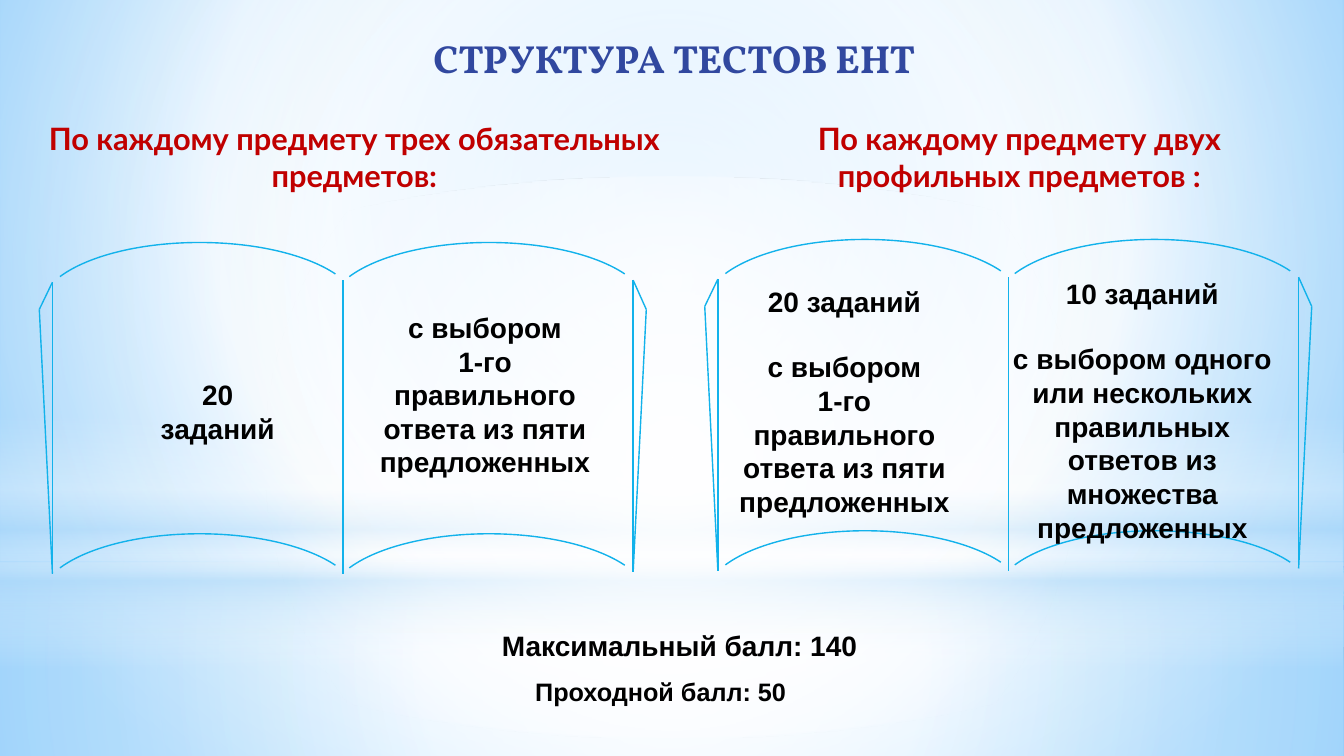
"""Builds the slide on the structure of the ENT tests."""
import pptx
import pptx.dml.color
import pptx.enum.shapes
import pptx.enum.text
import pptx.oxml
import pptx.oxml.ns
import pptx.util

Inches = pptx.util.Inches
RGBColor = pptx.dml.color.RGBColor
Shape = pptx.enum.shapes.MSO_SHAPE
Align = pptx.enum.text.PP_ALIGN
qn = pptx.oxml.ns.qn

BLACK = RGBColor(0, 0, 0)
NAVY = RGBColor(0x31, 0x48, 0x9F)
RED = RGBColor(0xC0, 0, 0)
CYAN = RGBColor(0x12, 0xB2, 0xEB)
PALE = RGBColor(0xB4, 0xDC, 0xFA)
WHITE = RGBColor(0xFF, 0xFF, 0xFF)
SKY = RGBColor(0x9E, 0xD5, 0xFF)
BLUE = RGBColor(0x5B, 0xB9, 0xFF)

MIDDLE = (50, 50, 50, 50)
BACK = [(0, SKY, 100), (60, WHITE, 100), (100, BLUE, 100)]
GLOWS = [
    (Shape.RECTANGLE, 5.58, 1.92, MIDDLE, [(0, WHITE, 91), (37, WHITE, 76), (100, PALE, 79)]),
    (Shape.RECTANGLE, 0, 5.58, MIDDLE, [(0, WHITE, 89), (48, WHITE, 62), (100, PALE, 79)]),
    (Shape.RECTANGLE, 4.12, 2.5, None,
     [(0, WHITE, 0), (29, WHITE, 30), (45, PALE, 40), (55, WHITE, 26), (65, PALE, 60), (100, WHITE, 0)]),
    (Shape.OVAL, 1.75, 5.58, MIDDLE, [(0, WHITE, 100), (56, WHITE, 0)]),
]

BOOKS = [(0, 0), (6.6, -0.03)]
ARCS = [(x, y) for y in (1.48, 4.37) for x in (1.32, 4.19)]
EDGES = [
    (0.52, 2.8, 0.52, 5.69), (3.4, 2.78, 3.4, 5.69), (6.28, 2.78, 6.28, 5.67),
    (0.39, 3.07, 0.52, 5.69), (6.41, 3.07, 6.28, 5.67), (0.39, 3.07, 0.52, 2.8),
    (6.28, 3.07, 6.28, 2.78), (6.41, 3.07, 6.28, 2.78),
]

TITLE = ("Vollkorn", 28, NAVY, Align.LEFT)
HEAD = ("Lato", 22, RED, Align.CENTER)
BODY = ("Arial", 20, BLACK, Align.CENTER)
SCORE = ("Arial", 20, BLACK, Align.LEFT)
PASS = ("Arial", 18, BLACK, Align.LEFT)
ONE = ["с выбором", "1-го правильного ответа из пяти предложенных"]
MANY = "с выбором одного или нескольких правильных ответов из множества предложенных"

TEXTS = [
    ((4.2, 0.29, 5.46, 0.57), TITLE, ["СТРУКТУРА ТЕСТОВ ЕНТ"], 0),
    ((0.36, 1.14, 6.31, 0.84), HEAD, ["По каждому предмету трех обязательных предметов:"], 0),
    ((7.22, 1.14, 5.78, 0.84), HEAD, ["По каждому предмету двух профильных предметов :"], 0),
    ((1.18, 3.7, 1.96, 0.77), BODY, ["20", "заданий"], 0),
    ((3.6, 3.03, 2.42, 2.12), BODY, ONE, 0),
    ((7.22, 2.77, 2.31, 2.46), BODY, ["20 заданий"] + ONE, 23),
    ((9.91, 2.69, 2.84, 2.79), BODY, ["10 заданий", MANY], 23),
    ((4.88, 6.19, 4.3, 0.44), SCORE, ["Максимальный балл: 140"], 0),
    ((5.21, 6.66, 2.78, 0.4), PASS, ["Проходной балл: 50"], 0),
]


def paint(fill, root, stops, focus):
    """Give a fill its gradient stops, round a focus or straight down."""
    fill.gradient()
    grad = root.find(".//" + qn("a:gradFill"))
    grad.clear()
    marks = "".join(
        f'<a:gs pos="{pos * 1000}"><a:srgbClr val="{tint}">'
        f'<a:alpha val="{alpha * 1000}"/></a:srgbClr></a:gs>'
        for pos, tint, alpha in stops)
    if focus:
        sides = " ".join(f'{k}="{v * 1000}"' for k, v in zip("ltrb", focus))
        way = f'<a:path path="circle"><a:fillToRect {sides}/></a:path>'
    else:
        way = '<a:lin ang="5400000" scaled="0"/>'
    space = pptx.oxml.ns.nsdecls("a")
    made = pptx.oxml.parse_xml(f"<a:gradFill {space}><a:gsLst>{marks}</a:gsLst>{way}</a:gradFill>")
    for part in list(made):
        grad.append(part)


def ink(item):
    """Draw an item in the book's thin line."""
    item.line.color.rgb = CYAN
    item.line.width = pptx.util.Pt(1)


def book(slide, dx, dy):
    """Draw one open book, shifted by dx and dy."""
    group = slide.shapes.add_group_shape()
    for x, y in ARCS:
        arc = group.shapes.add_shape(
            Shape.ARC, Inches(x + dx), Inches(y + dy), Inches(1.32), Inches(3.17))
        arc.adjustments[0] = 169.83
        arc.adjustments[1] = 45.31
        arc.rotation = 270
        arc.shadow.inherit = False
        arc.fill.background()
        ink(arc)
    for x1, y1, x2, y2 in EDGES:
        edge = group.shapes.add_connector(
            pptx.enum.shapes.MSO_CONNECTOR.STRAIGHT,
            Inches(x1 + dx), Inches(y1 + dy), Inches(x2 + dx), Inches(y2 + dy))
        ink(edge)
        props = edge.element.spPr
        props.append(props.makeelement(qn("a:effectLst"), {}))


def write(slide, spot, style, lines, gap):
    """Place a text box, with a gap after its first line."""
    face, size, tint, align = style
    frame = slide.shapes.add_textbox(*map(Inches, spot)).text_frame
    frame.word_wrap = style is not PASS
    frame.auto_size = pptx.enum.text.MSO_AUTO_SIZE.SHAPE_TO_FIT_TEXT
    frame.text = "\n".join(lines)
    for para in frame.paragraphs:
        para.alignment = align
        para.font.name = face
        para.font.size = pptx.util.Pt(size)
        para.font.bold = True
        para.font.color.rgb = tint
    if gap:
        frame.paragraphs[0].space_after = pptx.util.Pt(gap)


def main():
    """Build and save the slide."""
    deck = pptx.Presentation()
    deck.slide_width = Inches(13.33)
    deck.slide_height = Inches(7.5)
    slide = deck.slides.add_slide(deck.slide_layouts[6])
    paint(slide.background.fill, slide.element, BACK, (20, 10, 20, 60))
    for kind, top, height, focus, stops in GLOWS:
        glow = slide.shapes.add_shape(kind, 0, Inches(top), deck.slide_width, Inches(height))
        glow.shadow.inherit = False
        glow.line.fill.background()
        paint(glow.fill, glow.element, stops, focus)
    for dx, dy in BOOKS:
        book(slide, dx, dy)
    for text in TEXTS:
        write(slide, *text)
    deck.save("out.pptx")


if __name__ == "__main__":
    main()
